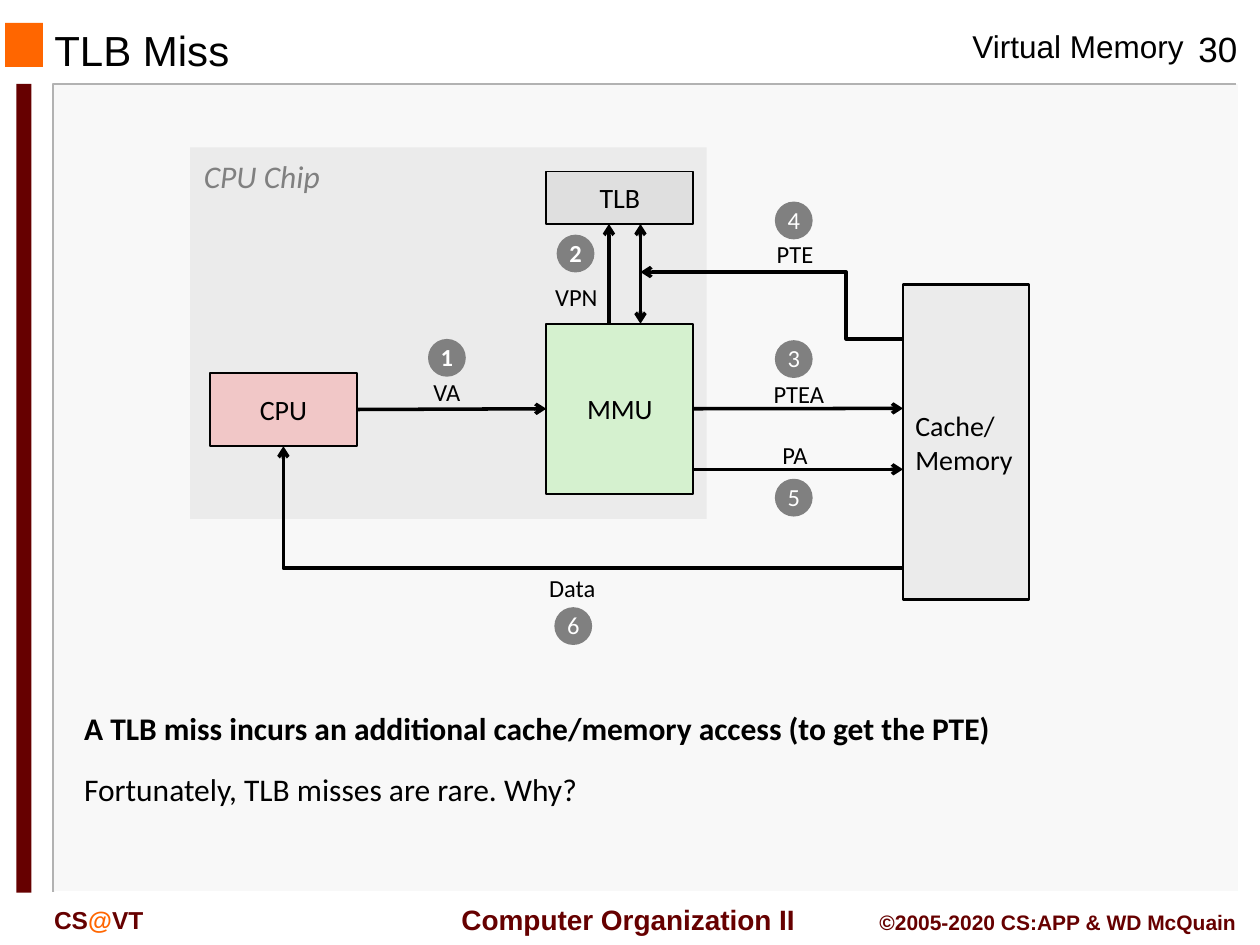
from lxml import etree
from pptx import Presentation
from pptx.dml.color import RGBColor
from pptx.enum import shapes, text
from pptx.oxml import ns
from pptx.util import Pt

BLACK = RGBColor(0, 0, 0)
WHITE = RGBColor(255, 255, 255)
GREY = RGBColor(0x80, 0x80, 0x80)
EDGE = RGBColor(0xB2, 0xB2, 0xB2)
PANEL = RGBColor(0xF8, 0xF8, 0xF8)
PALE = RGBColor(0xEB, 0xEB, 0xEB)
SILVER = RGBColor(0xDF, 0xDF, 0xDF)
GREEN = RGBColor(0xD5, 0xF1, 0xCF)
PINK = RGBColor(0xF1, 0xC7, 0xC7)
ORANGE = RGBColor(0xFF, 0x66, 0)
MAROON = RGBColor(0x66, 0, 0)

LEFT, CENTER, RIGHT = text.PP_ALIGN.LEFT, text.PP_ALIGN.CENTER, text.PP_ALIGN.RIGHT
TOP, MIDDLE = text.MSO_ANCHOR.TOP, text.MSO_ANCHOR.MIDDLE
RECT, OVAL = shapes.MSO_SHAPE.RECTANGLE, shapes.MSO_SHAPE.OVAL
STRAIGHT, ELBOW = shapes.MSO_CONNECTOR.STRAIGHT, shapes.MSO_CONNECTOR.ELBOW

TITLE = ("TLB Miss", (23.8, 10.2, 426, 36.6))
FURNITURE = [
    ((31, 48.2, 676.8, 461.5), PANEL),
    ((2.9, 13, 21.6, 25.2), ORANGE),
    ((9.4, 47.9, 8.6, 462.2), MAROON),
    ((108.7, 84.2, 295.2, 212.4), PALE),
]
EDGES = [
    ([(706.5, 48.2), (30.2, 48.2), (30.2, 509.8)], EDGE),
    ([(707.8, 48.2), (707.8, 509.8), (31.7, 509.8)], WHITE),
]
HEADER_FOOTER = [
    ([("Virtual Memory", BLACK)], (548.6, 12.2, 135.4, 28.8), 18, False, LEFT, TOP),
    ([("30", BLACK)], (671.8, 12.2, 48.2, 31), 20, False, CENTER, TOP),
    ([(" Computer Organization II", MAROON)], (250.6, 511.9, 212.4, 26.6), 16, True, CENTER, MIDDLE),
    ([("CS", MAROON), ("@", ORANGE), ("VT", MAROON)], (23.8, 513.4, 108, 23.8), 14, True, LEFT, TOP),
    ([("©2005-2020 CS:APP & WD McQuain", MAROON)], (491.8, 516.2, 221.8, 21.6), 12, True, RIGHT, TOP),
]
BLOCKS = {
    "MMU": ((312.2, 185, 84, 97.2), GREEN, 1, CENTER),
    "Cache/\nMemory": ((516, 162.7, 72, 180), PALE, 1.5, LEFT),
    "CPU": ((120, 213, 84, 42), PINK, 1, CENTER),
    "TLB": ((312.2, 98, 84, 30), SILVER, 1, CENTER),
}
LABELS = [
    ("VA", 255.4, 224.3), ("VPN", 329.4, 170.3), ("PTEA", 456.5, 225.7),
    ("PTE", 454.3, 145.8), ("PA", 454.3, 260.3), ("Data", 327, 336.6),
]
LABEL_W, LABEL_H = 44, 23.8
STEPS = [
    ("1", 255.4, 204.5, True), ("2", 328.9, 144.9, True), ("3", 453.6, 205.2, False),
    ("4", 453.6, 126, False), ("5", 453.6, 284.4, False), ("6", 327.6, 357.8, False),
]
STEP_D = 21.6
ARROWS = [
    (STRAIGHT, (204, 234), (312.2, 233.6), ("CPU", 3), ("MMU", 1), False),
    (STRAIGHT, (396.2, 233.6), (516, 233.4), ("MMU", 3), None, False),
    (STRAIGHT, (396.2, 268.2), (516, 268.2), None, None, False),
    (STRAIGHT, (348, 185), (348, 128), None, None, False),
    (STRAIGHT, (366, 128), (366, 185), None, None, True),
    (ELBOW, (516, 193.7), (366, 155.5), None, None, False),
    (ELBOW, (516, 324.7), (162, 255), None, None, False),
]
PTE_ROUTE, DATA_ROUTE = 5, 6
NOTES = [
    ("A TLB miss incurs an additional cache/memory access (to get the PTE)", 401.8, True),
    ("Fortunately, TLB misses are rare. Why?", 436.3, False),
]


def set_attrs(obj, values):
    for name, value in values.items():
        setattr(obj, name, value)


def write(sp, paragraphs, size, font="Calibri", align=LEFT, anchor=MIDDLE,
          wrap=False, spacing=None, **style):
    tf = sp.text_frame
    set_attrs(tf, dict(
        word_wrap=wrap, vertical_anchor=anchor, auto_size=text.MSO_AUTO_SIZE.NONE,
        margin_left=Pt(7.2), margin_right=Pt(7.2), margin_top=Pt(3.6), margin_bottom=Pt(3.6)))
    for i, runs in enumerate(paragraphs):
        p = tf.add_paragraph() if i else tf.paragraphs[0]
        set_attrs(p, dict(alignment=align, line_spacing=spacing))
        for words, color in runs:
            r = p.add_run()
            r.text = words
            set_attrs(r.font, dict(name=font, size=Pt(size), **style))
            r.font.color.rgb = color


def add_shape(s, kind, box, fill, width=0):
    sp = s.shapes.add_shape(kind, *map(Pt, box))
    sp.shadow.inherit = False
    sp.fill.solid()
    sp.fill.fore_color.rgb = fill
    if width:
        sp.line.color.rgb = BLACK
        sp.line.width = Pt(width)
    else:
        sp.line.fill.background()
    return sp


def add_text(s, box, paragraphs, size, **style):
    sp = s.shapes.add_textbox(*map(Pt, box))
    write(sp, paragraphs, size, **style)


def add_edge(s, points, color):
    fb = s.shapes.build_freeform(*map(Pt, points[0]))
    fb.add_line_segments([tuple(map(Pt, pt)) for pt in points[1:]], close=False)
    sp = fb.convert_to_shape()
    sp.shadow.inherit = False
    sp.fill.background()
    sp.line.color.rgb = color
    sp.line.width = Pt(1)


def add_arrow(s, blocks, kind, start, end, source, target, both):
    cx = s.shapes.add_connector(kind, *map(Pt, start + end))
    if source:
        cx.begin_connect(blocks[source[0]], source[1])
    if target:
        cx.end_connect(blocks[target[0]], target[1])
    cx.line.color.rgb = BLACK
    cx.line.width = Pt(2)
    ln = cx.line._get_or_add_ln()
    for tag in ("a:headEnd", "a:tailEnd") if both else ("a:tailEnd",):
        etree.SubElement(ln, ns.qn(tag), type="arrow")
    etree.SubElement(cx._element.spPr, ns.qn("a:effectLst"))
    return cx


def main():
    prs = Presentation()
    set_attrs(prs, dict(slide_width=Pt(720), slide_height=Pt(540)))
    s = prs.slides.add_slide(prs.slide_layouts[5])

    for box, fill in FURNITURE:
        add_shape(s, RECT, box, fill)
    for points, color in EDGES:
        add_edge(s, points, color)
    for runs, box, size, bold, align, anchor in HEADER_FOOTER:
        add_text(s, box, [runs], size, font="Arial", bold=bold, align=align, anchor=anchor)

    words, box = TITLE
    title = s.shapes.title
    set_attrs(title, dict(zip(("left", "top", "width", "height"), map(Pt, box))))
    write(title, [[(words, BLACK)]], 24, font="Arial", wrap=True)

    blocks = {}
    for name, (box, fill, width, align) in BLOCKS.items():
        sp = blocks[name] = add_shape(s, RECT, box, fill, width)
        write(sp, [[(line, BLACK)] for line in name.split("\n")], 16, align=align)
    add_text(s, (109.4, 86.4, 83.5, 28.8), [[("CPU Chip", GREY)]], 18, anchor=TOP, italic=True)

    arrows = [add_arrow(s, blocks, *arrow) for arrow in ARROWS]
    arrows[PTE_ROUTE]._element.spPr.prstGeom.get_or_add_avLst()
    etree.SubElement(arrows[PTE_ROUTE]._element.spPr.prstGeom.avLst, ns.qn("a:gd"),
                     name="adj1", fmla="val 21600")
    arrows[DATA_ROUTE]._element.spPr.prstGeom.set("prst", "bentConnector2")

    for words, x, y in LABELS:
        box = (x - LABEL_W / 2, y - LABEL_H / 2, LABEL_W, LABEL_H)
        add_text(s, box, [[(words, BLACK)]], 14, align=CENTER, spacing=0.98)
    for words, x, y, bold in STEPS:
        sp = add_shape(s, OVAL, (x - STEP_D / 2, y - STEP_D / 2, STEP_D, STEP_D), GREY)
        write(sp, [[(words, WHITE)]], 14, align=CENTER, spacing=0.98, bold=bold)
    for words, y, bold in NOTES:
        add_text(s, (41, y, 607, 28.8), [[(words, BLACK)]], 18, anchor=TOP, wrap=True, bold=bold)

    prs.save("out.pptx")


if __name__ == "__main__":
    main()
